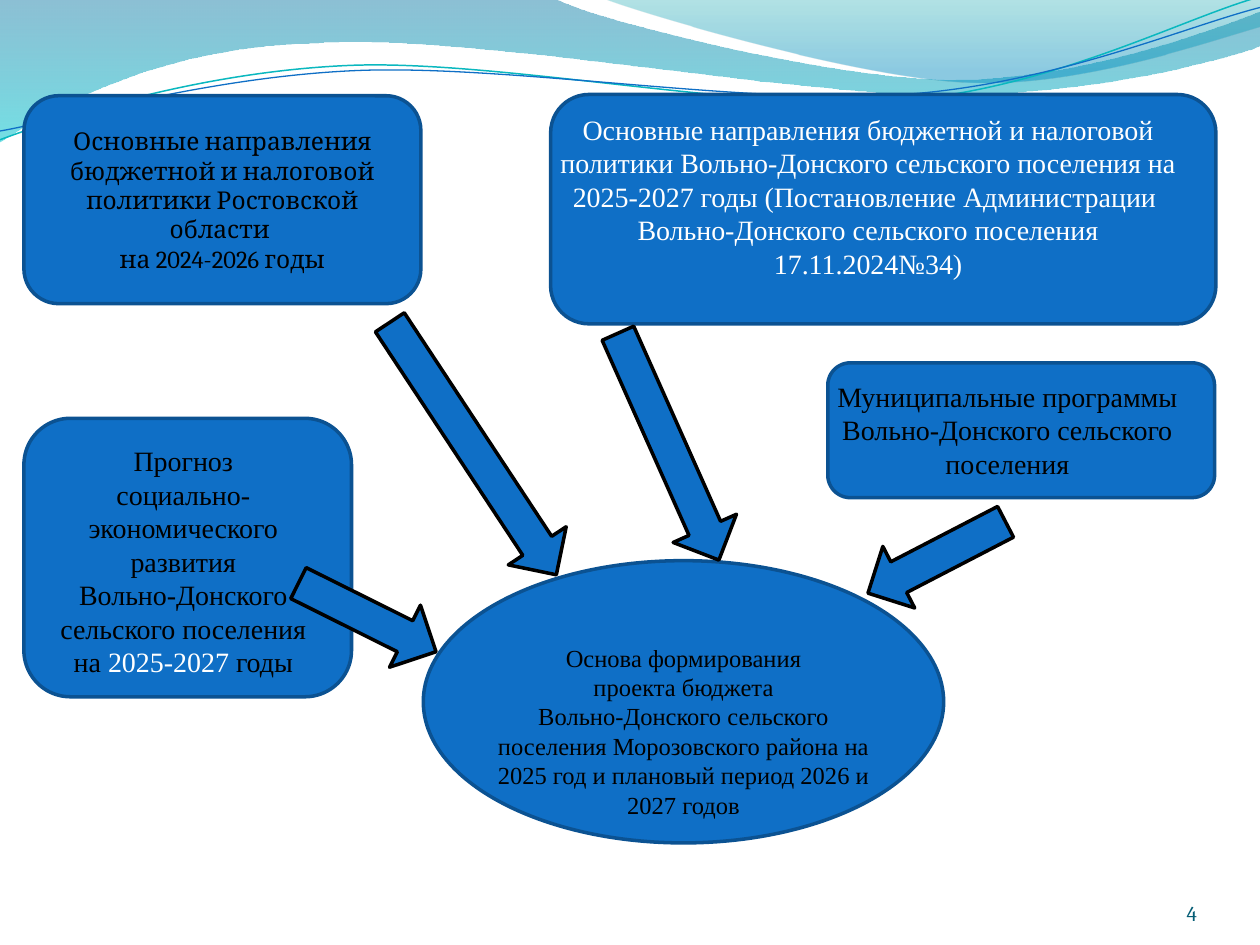
import math
import pptx
import pptx.util
import pptx.dml.color
import pptx.enum.shapes
import pptx.enum.text
import pptx.oxml.ns
import lxml.etree

PX = 9144  # 100 px to the inch
BLUE, EDGE, BLACK, WHITE = "0F6FC6", "0B5292", "000000", "FFFFFF"
SERIF = "Times New Roman"
KIND = pptx.enum.shapes.MSO_SHAPE
ALIGN = pptx.enum.text.PP_ALIGN
ANCHOR = pptx.enum.text.MSO_ANCHOR
rgb = pptx.dml.color.RGBColor.from_string
qn = pptx.oxml.ns.qn

deck = pptx.Presentation()
deck.slide_width, deck.slide_height = 1000 * PX, 750 * PX
slide = deck.slides.add_slide(deck.slide_layouts[6])
shapes = slide.shapes


def add(kind, box, edge=EDGE, turn=0):
    """Add a filled shape, or a bare text box when kind is None."""
    place = [n * PX for n in box]
    if kind is None:
        return shapes.add_textbox(*place)
    shape = shapes.add_shape(kind, *place)
    shape.shadow.inherit = False
    shape.fill.solid()
    shape.fill.fore_color.rgb = rgb(BLUE)
    shape.line.color.rgb = rgb(edge)
    shape.line.width = pptx.util.Pt(2)
    shape.rotation = turn
    return shape


def write(shape, paras, size, font=SERIF, color=BLACK, align=ALIGN.CENTER):
    """Fill a shape with paragraphs; each is a list of runs, (text, color) or text."""
    frame = shape.text_frame
    frame.word_wrap = True
    for i, runs in enumerate(paras):
        para = frame.paragraphs[0] if i == 0 else frame.add_paragraph()
        para.alignment = align
        for item in runs:
            text, tint = (item, color) if isinstance(item, str) else item
            run = para.add_run()
            run.text = text
            run.font.name = font
            run.font.size = pptx.util.Pt(size)
            run.font.color.rgb = rgb(tint)


# Waves: a step of one point is a line, a step of three points is a curve.
# The thin lines are tilted about a centre.
TILT = 357.3
waves = [
    ([[(0, 0)], [(440, -1)], [(476, 17), (664, 63), (758, 63)],
      [(853, 63), (958, 26), (1000, 9)], [(1001, 36)],
      [(983, 44), (870, 76), (746, 75)], [(622, 75), (382, 28), (257, 34)],
      [(129, 36), (46, 83), (-1, 113)]],
     [("0074A1", 0, 45), ("00C6CF", 1, 55)], None, None),
    ([[(479, -1)], [(509, 11), (682, 62), (769, 65)],
      [(856, 69), (961, 32), (1000, 21)], [(1000, 0)]],
     [("00A1A9", 0, 30), ("008BBF", 0.8, 45)], None, None),
    ([[(0, 111)], [(48, 93), (158, 57), (277, 52)],
      [(395, 47), (593, 89), (713, 80)], [(833, 71), (938, 15), (998, -2)]],
     None, ("0AB8BF", 0.85), (499, 57.5)),
    ([[(0, 104)], [(47, 96), (164, 61), (283, 56)],
      [(403, 51), (597, 84), (717, 75)], [(836, 67), (941, 21), (1000, 6)]],
     None, (BLUE, 0.75), (499.5, 59)),
]
cos, sin = math.cos(math.radians(TILT)), math.sin(math.radians(TILT))
for steps, stops, line, mid in waves:
    points = [point for step in steps for point in step]
    if mid:
        offs = [(x - mid[0], y - mid[1]) for x, y in points]
        points = [(mid[0] + x * cos + y * sin, mid[1] - x * sin + y * cos)
                  for x, y in offs]
    # Ten units to the px
    points = [(round(x * 10), round(y * 10)) for x, y in points]
    pen = shapes.build_freeform(*points[0], scale=PX / 10)
    pen.add_line_segments(points[1:], close=stops is not None)
    wave = pen.convert_to_shape()
    wave.shadow.inherit = False
    legs = list(wave._element.iter(qn("a:lnTo")))
    for step in steps[1:]:
        group, legs = legs[:len(step)], legs[len(step):]
        if len(step) == 3:
            curve = lxml.etree.Element(qn("a:cubicBezTo"))
            group[0].addprevious(curve)
            for leg in group:
                curve.append(leg[0])
                leg.getparent().remove(leg)
    if stops:
        wave.line.fill.background()
        wave.fill.gradient()
        wave.fill.gradient_angle = 270
        for stop, (color, spot, alpha) in zip(wave.fill.gradient_stops, stops):
            stop.color.rgb = rgb(color)
            stop.position = spot
        marks = wave._element.spPr.iter(qn("a:srgbClr"))
        for mark, (color, spot, alpha) in zip(marks, stops):
            lxml.etree.SubElement(mark, qn("a:alpha"), val=str(alpha * 1000))
    else:
        wave.rotation = TILT
        wave.fill.background()
        wave.line.color.rgb = rgb(line[0])
        wave.line.width = pptx.util.Pt(line[1])

# Slide number
number = add(None, (867, 695, 83, 40))
frame = number.text_frame
frame.margin_left = frame.margin_right = frame.margin_top = frame.margin_bottom = 0
frame.vertical_anchor = ANCHOR.BOTTOM
write(number, [["4"]], 12, "Cambria", "045D75", ALIGN.RIGHT)

# Result and its sources, with labels laid over them
add(KIND.OVAL, (336, 445, 413, 224))
region = add(KIND.ROUNDED_RECTANGLE, (19, 76, 315, 165))
region.text_frame.vertical_anchor = ANCHOR.MIDDLE
write(region, [["Основные направления бюджетной и налоговой политики Ростовской области "],
               ["на 2024-2026 годы"]], 14, "Cambria")
for box in [(19, 332, 260, 221), (657, 288, 307, 107)]:
    add(KIND.ROUNDED_RECTANGLE, box)

labels = [
    ((634, 296, 331, 91), 5, 16, BLACK,
     [["Муниципальные программы Вольно-Донского сельского поселения"]]),
    ((27, 320, 237, 226), 32, 16, BLACK,
     [["Прогноз"], ["социально-"], ["экономического"], ["развития"],
      ["Вольно-Донского сельского поселения на ", ("2025-2027 ", WHITE), "годы"]]),
    ((384, 471, 317, 185), 39, 14, BLACK,
     [["Основа формирования"], ["проекта бюджета"],
      ["Вольно-Донского сельского поселения Морозовского района на 2025 год "
       "и плановый период 2026 и 2027 годов"]]),
    ((429, 84, 520, 145), 5, 16, WHITE,
     [["Основные направления бюджетной и налоговой политики Вольно-Донского "
       "сельского поселения на 2025-2027 годы (Постановление Администрации  "
       "Вольно-Донского сельского поселения 17.11.2024№34)"]]),
]
for box, inset, size, color, paras in labels:
    if color == WHITE:
        add(KIND.ROUNDED_RECTANGLE, (437, 75, 528, 182))
    label = add(None, box)
    label.text_frame.margin_top = inset * PX
    label.text_frame.auto_size = pptx.enum.text.MSO_AUTO_SIZE.SHAPE_TO_FIT_TEXT
    write(label, paras, size, color=color)

# Arrows into the result
for left, top, high, turn in [(716, 381, 123, 62.6), (348, 236, 240, 326.6),
                              (264, 429, 122, 296.5), (503, 256, 197, 336)]:
    add(KIND.DOWN_ARROW, (left, top, 55, high), BLACK, turn)

deck.save("out.pptx")
